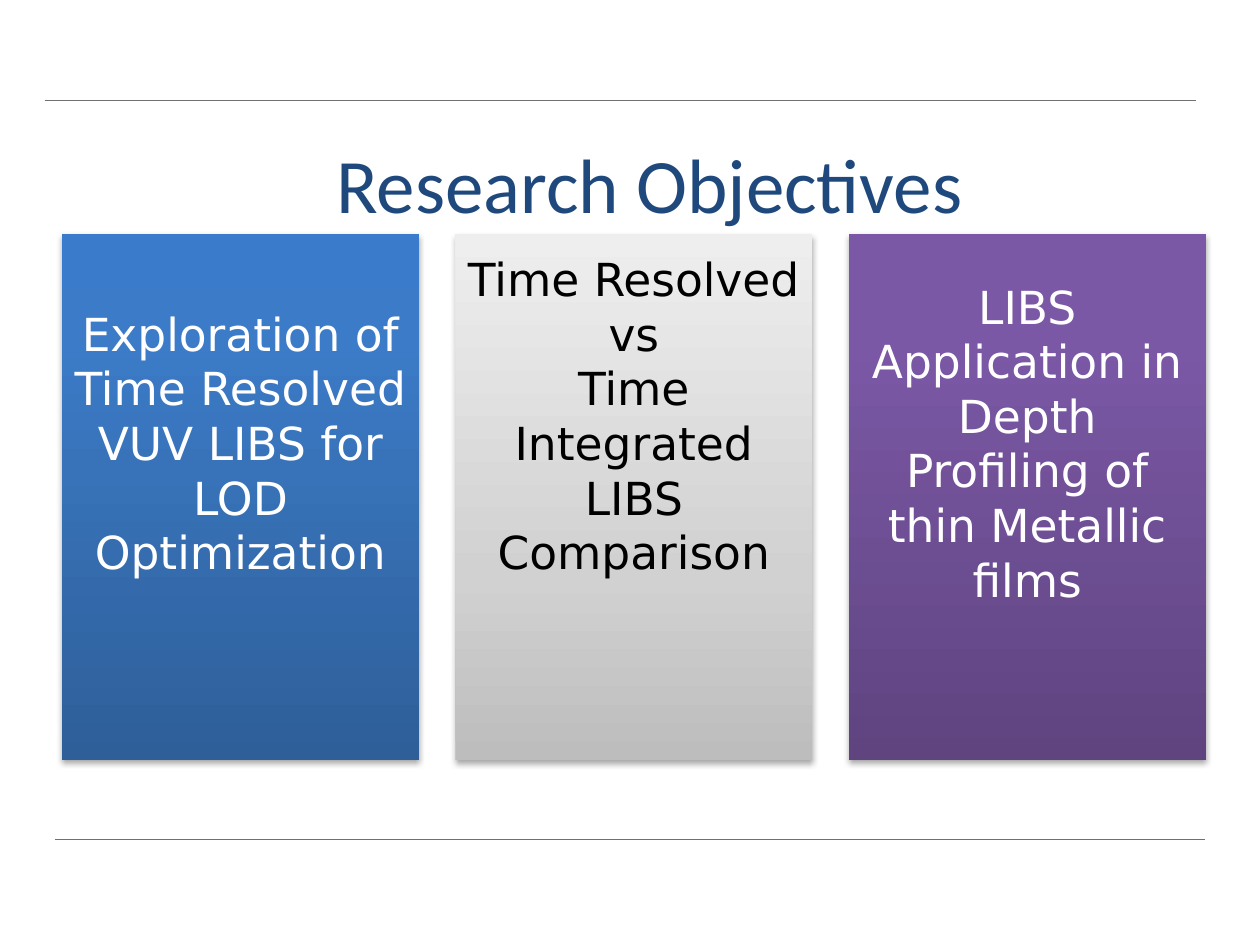
from copy import deepcopy

from lxml import etree
from pptx import Presentation
from pptx.dml.color import RGBColor
from pptx.enum.shapes import MSO_CONNECTOR as Connector, MSO_SHAPE as Shape
from pptx.enum.text import MSO_ANCHOR as Anchor, PP_ALIGN as Align
from pptx.oxml.ns import qn
from pptx.util import Cm, Pt

WHITE = RGBColor(0xFF, 0xFF, 0xFF)
BLACK = RGBColor(0, 0, 0)
NAVY = RGBColor(0x1F, 0x49, 0x7D)
RULE_GRAY = RGBColor(0x70, 0x70, 0x70)
BLUES = [RGBColor(0x2E, 0x5F, 0x99), RGBColor(0x3C, 0x7B, 0xC7), RGBColor(0x3A, 0x7C, 0xCB)]
GRAYS = [RGBColor(0xBD, 0xBD, 0xBD), RGBColor(0xD1, 0xD1, 0xD1), RGBColor(0xEE, 0xEE, 0xEE)]
PURPLES = [RGBColor(0x5F, 0x44, 0x80), RGBColor(0x7B, 0x58, 0xA6), RGBColor(0x7C, 0x57, 0xA8)]


def fill_gradient(shape, colors, middle):
    shape.fill.gradient()
    shape.fill.gradient_angle = 90
    stop_list = shape._element.spPr.find(qn("a:gradFill")).find(qn("a:gsLst"))
    stop_list.append(deepcopy(stop_list[-1]))
    for stop, color, position in zip(shape.fill.gradient_stops, colors, (0, middle, 1)):
        stop.color.rgb = color
        stop.position = position


def add_shadow(shape, opacity, blur, distance):
    shape.shadow.inherit = False
    effects = shape._element.spPr.find(qn("a:effectLst"))
    shadow = etree.SubElement(effects, qn("a:outerShdw"), blurRad=str(Pt(blur)),
                              dist=str(Pt(distance)), dir="5400000", rotWithShape="0")
    color = etree.SubElement(shadow, qn("a:srgbClr"), val="000000")
    etree.SubElement(color, qn("a:alpha"), val=str(opacity * 1000))


presentation = Presentation()
presentation.slide_width = Cm(25.4)
presentation.slide_height = Cm(19.05)
slide = presentation.slides.add_slide(presentation.slide_layouts[6])

for left, top in [(0.9, 2.03), (1.1, 16.92)]:
    rule = slide.shapes.add_connector(
        Connector.STRAIGHT, Cm(left), Cm(top), Cm(left + 23.2), Cm(top))
    rule.line.color.rgb = RULE_GRAY
    rule.line.width = Pt(0.5)
    etree.SubElement(rule._element.spPr, qn("a:effectLst"))

title = slide.shapes.add_textbox(Cm(3.1), Cm(2.46), Cm(20), Cm(2.46))
title.text_frame.word_wrap = True
title.text_frame.vertical_anchor = Anchor.MIDDLE
title.text_frame.text = "Research Objectives"
paragraph = title.text_frame.paragraphs[0]
paragraph.alignment = Align.CENTER
paragraph.font.name = "Calibri"
paragraph.font.size = Pt(44)
paragraph.font.color.rgb = NAVY

objectives = [
    ("Exploration of Time Resolved VUV LIBS for LOD Optimization",
     BLUES, 0.8, WHITE, (35, 3.1, 1.8), 2.2),
    ("Time Resolved vs\nTime Integrated LIBS Comparison",
     GRAYS, 0.35, BLACK, (32, 3.5, 2.2), 3.3),
    ("LIBS Application in Depth Profiling of thin Metallic films",
     PURPLES, 0.8, WHITE, (35, 3.1, 1.8), 2.2),
]
for column, (text, colors, middle, text_color, shadow, lift) in enumerate(objectives):
    panel = slide.shapes.add_shape(
        Shape.RECTANGLE, Cm(1.25 + 7.93 * column), Cm(4.72), Cm(7.2), Cm(10.6))
    fill_gradient(panel, colors, middle)
    panel.line.fill.background()
    add_shadow(panel, *shadow)
    text_frame = panel.text_frame
    text_frame.word_wrap = True
    text_frame.vertical_anchor = Anchor.MIDDLE
    text_frame.margin_bottom = Cm(0.13 + lift)
    text_frame.text = text
    for paragraph in text_frame.paragraphs:
        paragraph.alignment = Align.CENTER
        paragraph.line_spacing = Pt(31.2)
        paragraph.font.name = "DejaVu Sans"
        paragraph.font.size = Pt(26)
        paragraph.font.color.rgb = text_color

presentation.save("out.pptx")
